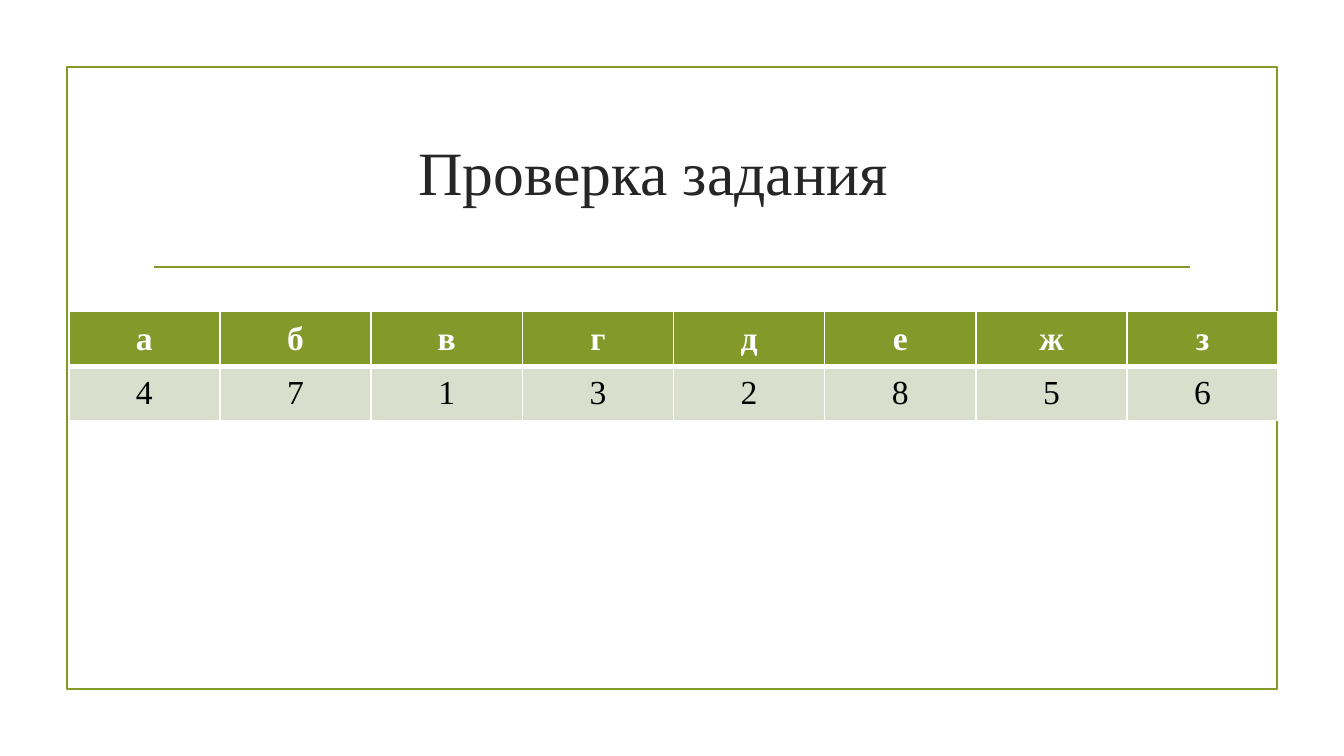
from dataclasses import dataclass

from lxml.etree import SubElement
from pptx import Presentation
from pptx.dml.color import RGBColor
from pptx.enum.shapes import MSO_CONNECTOR as Connector, MSO_SHAPE as Shape
from pptx.enum.text import MSO_ANCHOR as Anchor, MSO_AUTO_SIZE as AutoSize, PP_ALIGN as Align
from pptx.oxml.ns import qn
from pptx.util import Cm, Pt


@dataclass(frozen=True)
class Theme:
    """Colours, font and sizes of the deck."""
    accent: str = "83992A"
    pale: str = "D9DECD"
    light: str = "FFFFFF"
    dark: str = "262626"
    black: str = "000000"
    font: str = "Times New Roman"
    title_size: float = 33
    cell_size: float = 18
    line_width: float = 1.25
    border: float = 1
    header_border: float = 3


@dataclass(frozen=True)
class Box:
    """A rectangle in centimetres."""
    left: float
    top: float
    width: float
    height: float

    def lengths(self):
        """Return the position and size as lengths."""
        return Cm(self.left), Cm(self.top), Cm(self.width), Cm(self.height)


THEME = Theme()
ANSWERS = {"а": 4, "б": 7, "в": 1, "г": 3, "д": 2, "е": 8, "ж": 5, "з": 6}


def style_para(para, size, color, bold=False):
    """Centre a paragraph and set its font."""
    para.alignment = Align.CENTER
    para.font.name = THEME.font
    para.font.size = Pt(size)
    para.font.bold = bold
    para.font.color.rgb = RGBColor.from_string(color)


def style_line(line):
    """Give an outline the accent colour and width."""
    line.color.rgb = RGBColor.from_string(THEME.accent)
    line.width = Pt(THEME.line_width)


def add_frame(page, box, rule_inset, rule_drop):
    """Draw the page frame and the rule under the title."""
    frame = page.shapes.add_shape(Shape.RECTANGLE, *box.lengths())
    frame.shadow.inherit = False
    frame.fill.background()
    style_line(frame.line)
    rule_y = Cm(box.top + rule_drop)
    rule = page.shapes.add_connector(
        Connector.STRAIGHT,
        Cm(box.left + rule_inset), rule_y,
        Cm(box.left + box.width - rule_inset), rule_y,
    )
    SubElement(rule._element.spPr, qn("a:effectLst"))
    style_line(rule.line)


def add_title(page, box, text):
    """Place the title, set slightly left of the middle of its box."""
    title = page.shapes.title
    title.left, title.top, title.width, title.height = box.lengths()
    frame = title.text_frame
    frame.text = text
    frame.auto_size = AutoSize.NONE
    frame.word_wrap = True
    frame.vertical_anchor = Anchor.MIDDLE
    frame.margin_right = Cm(0.97)
    style_para(frame.paragraphs[0], THEME.title_size, THEME.dark)


def add_border(cell, side, width):
    """Add a light border to one side of a cell."""
    line = SubElement(cell._tc.get_or_add_tcPr(), qn(f"a:ln{side}"), w=str(Pt(width)))
    fill = SubElement(line, qn("a:solidFill"))
    SubElement(fill, qn("a:srgbClr"), val=THEME.light)


def fill_cell(cell, text, is_header):
    """Write one cell and set its borders, fill and font."""
    top, bottom = THEME.border, THEME.header_border
    if not is_header:
        top, bottom = bottom, top
    for side, width in zip("LRTB", (THEME.border, THEME.border, top, bottom)):
        add_border(cell, side, width)
    cell.fill.solid()
    cell.fill.fore_color.rgb = RGBColor.from_string(THEME.accent if is_header else THEME.pale)
    cell.vertical_anchor = Anchor.MIDDLE
    cell.text = str(text)
    color = THEME.light if is_header else THEME.black
    style_para(cell.text_frame.paragraphs[0], THEME.cell_size, color, is_header)


def add_answers(page, box, answers):
    """Place the table with letters above their answers."""
    rows = (answers.keys(), answers.values())
    table = page.shapes.add_table(len(rows), len(answers), *box.lengths()).table
    for row_index, row in enumerate(rows):
        for column_index, text in enumerate(row):
            fill_cell(table.cell(row_index, column_index), text, row_index == 0)


def main():
    """Build and save the deck."""
    deck = Presentation()
    deck.slide_width, deck.slide_height = Cm(25.4), Cm(14.29)
    page = deck.slides.add_slide(deck.slide_layouts[5])
    add_frame(page, Box(1.27, 1.27, 22.86, 11.75), rule_inset=1.64, rule_drop=3.78)
    add_title(page, Box(1.27, 1.96, 22.86, 2.54), "Проверка задания")
    add_answers(page, Box(1.3, 5.89, 22.86, 2.06), ANSWERS)
    deck.save("out.pptx")


if __name__ == "__main__":
    main()
